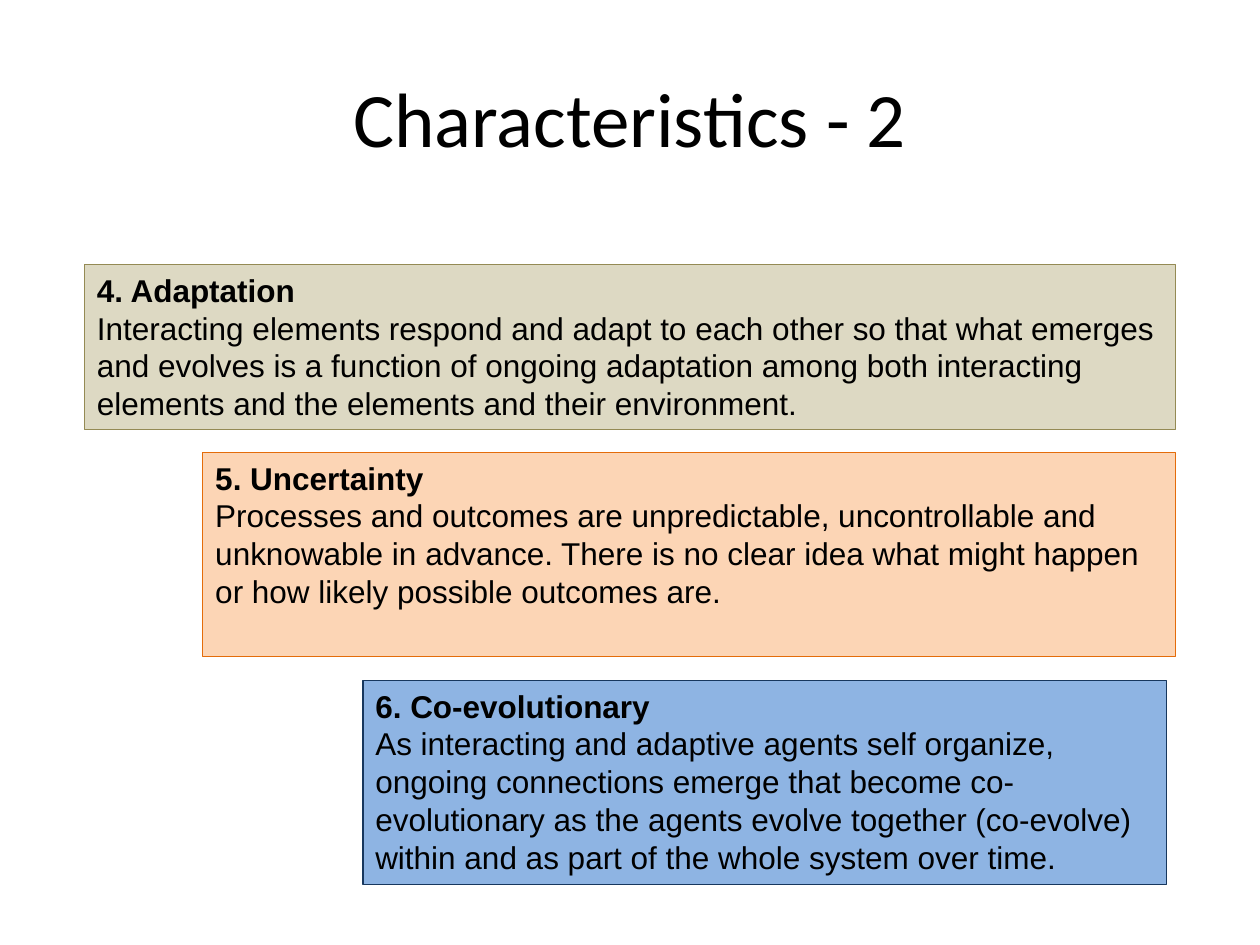
from dataclasses import dataclass

import pptx
import pptx.dml.color
import pptx.enum.shapes
import pptx.enum.text
import pptx.util

Inches = pptx.util.Inches
Pt = pptx.util.Pt
RGB = pptx.dml.color.RGBColor.from_string


@dataclass(frozen=True)
class Theme:
    title_font: str = "Calibri"
    body_font: str = "Arial"
    title_size: float = 44
    body_size: float = 18
    border_width: float = 0.75
    ink: str = "000000"
    tan: tuple = ("DDD9C3", "948A54")
    orange: tuple = ("FCD5B5", "E46C0A")
    blue: tuple = ("8EB4E3", "17375E")


THEME = Theme()

CHARACTERISTICS = [
    ((2.88, 5.4, 6.38, 1.62), THEME.blue, "6. Co-evolutionary",
     "As interacting and adaptive agents self organize, ongoing connections "
     "emerge that become co-evolutionary as the agents evolve together "
     "(co-evolve) within and as part of the whole system over time."),
    ((1.61, 3.59, 7.72, 1.62), THEME.orange, "5. Uncertainty",
     "Processes and outcomes are unpredictable, uncontrollable and unknowable "
     "in advance. There is no clear idea what might happen or how likely "
     "possible outcomes are."),
    ((0.67, 2.1, 8.66, 1.31), THEME.tan, "4. Adaptation",
     "Interacting elements respond and adapt to each other so that what emerges "
     "and evolves is a function of ongoing adaptation among both interacting "
     "elements and the elements and their environment."),
]


def add_run(paragraph, text, font_name, size, bold=False):
    run = paragraph.add_run()
    run.text = text
    run.font.name = font_name
    run.font.size = Pt(size)
    run.font.bold = bold
    run.font.color.rgb = RGB(THEME.ink)


def place_title(slide, box, text):
    title = slide.shapes.title
    title.left, title.top, title.width, title.height = map(Inches, box)
    title.text_frame.vertical_anchor = pptx.enum.text.MSO_ANCHOR.MIDDLE
    paragraph = title.text_frame.paragraphs[0]
    paragraph.alignment = pptx.enum.text.PP_ALIGN.CENTER
    add_run(paragraph, text, THEME.title_font, THEME.title_size)


def place_characteristic(slide, box, colours, heading, description):
    panel = slide.shapes.add_shape(
        pptx.enum.shapes.MSO_SHAPE.RECTANGLE, *map(Inches, box))
    fill, border = colours
    panel.shadow.inherit = False
    panel.fill.solid()
    panel.fill.fore_color.rgb = RGB(fill)
    panel.line.color.rgb = RGB(border)
    panel.line.width = Pt(THEME.border_width)

    frame = panel.text_frame
    frame.word_wrap = True
    frame.vertical_anchor = pptx.enum.text.MSO_ANCHOR.TOP
    paragraph = frame.paragraphs[0]
    paragraph.alignment = pptx.enum.text.PP_ALIGN.LEFT
    paragraph.font.size = Pt(THEME.body_size)
    add_run(paragraph, heading, THEME.body_font, THEME.body_size, bold=True)
    paragraph.add_line_break()
    add_run(paragraph, description, THEME.body_font, THEME.body_size)


def main():
    presentation = pptx.Presentation()
    presentation.slide_width = Inches(10)
    presentation.slide_height = Inches(7.5)
    slide = presentation.slides.add_slide(presentation.slide_layouts[5])
    place_title(slide, (0.5, 0.3, 9, 1.25), "Characteristics - 2")
    for box, colours, heading, description in CHARACTERISTICS:
        place_characteristic(slide, box, colours, heading, description)
    presentation.save("out.pptx")


if __name__ == "__main__":
    main()
